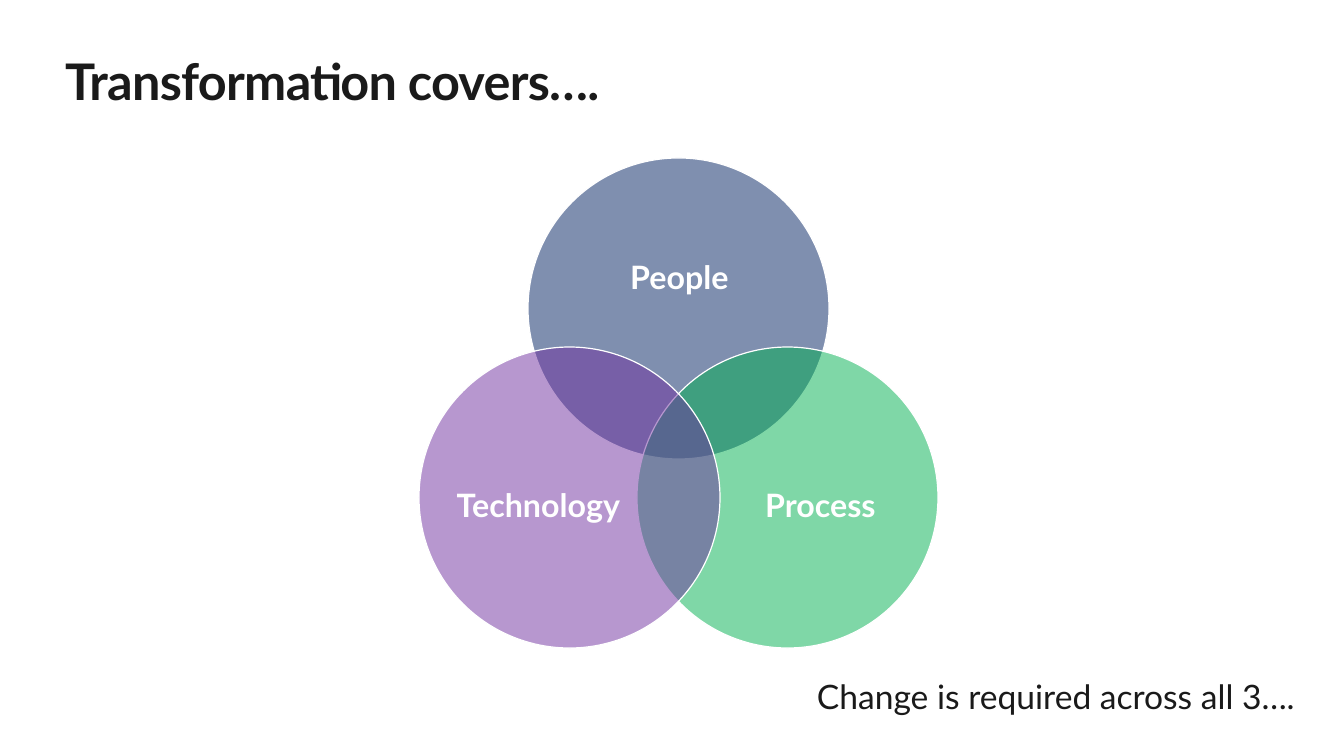
import pptx
import pptx.util
import pptx.dml.color
import pptx.enum.shapes
import pptx.enum.text
import pptx.oxml.ns
from lxml import etree

TITLE = "Transformation covers…."
CAPTION = "Change is required across all 3…."
CIRCLES = [
    {"label": "People", "color": "people", "circle": (528, 158), "text": (569, 211, 221, 136)},
    {"label": "Process", "color": "process", "circle": (637, 347), "text": (730, 424, 181, 166)},
    {"label": "Technology", "color": "technology", "circle": (419, 347), "text": (448, 424, 181, 166)},
]
COLORS = {
    "ink": "1A1A1A",
    "white": "FFFFFF",
    "people": "002060",
    "process": "00B050",
    "technology": "7030A0",
}
FONT = "Lato"
DIAMETER = 301
OPACITY = 50
EMU_PER_PX = 914400 / 100.8

ALIGN = pptx.enum.text.PP_ALIGN
ANCHOR = pptx.enum.text.MSO_ANCHOR
AUTO_SIZE = pptx.enum.text.MSO_AUTO_SIZE


def px(*lengths):
    return [pptx.util.Emu(round(length * EMU_PER_PX)) for length in lengths]


def color(name):
    return pptx.dml.color.RGBColor.from_string(COLORS[name])


def write_text(shape, text, size, ink="ink", bold=False, align=ALIGN.LEFT, anchor=ANCHOR.TOP,
               insets=(0, 0), line_spacing=1.0, tracking=None, auto_size=AUTO_SIZE.NONE):
    frame = shape.text_frame
    frame.word_wrap = True
    frame.auto_size = auto_size
    frame.vertical_anchor = anchor
    frame.margin_left = frame.margin_right = px(insets[0])[0]
    frame.margin_top = frame.margin_bottom = px(insets[1])[0]
    paragraph = frame.paragraphs[0]
    paragraph.alignment = align
    paragraph.line_spacing = line_spacing
    run = paragraph.add_run()
    run.text = text
    run.font.name = FONT
    run.font.size = pptx.util.Pt(size)
    run.font.bold = bold
    run.font.color.rgb = color(ink)
    if tracking is not None:
        run.font._element.set("spc", str(round(tracking * 100)))


def add_circle(slide, position, fill):
    shape = slide.shapes.add_shape(
        pptx.enum.shapes.MSO_SHAPE.OVAL, *px(*position, DIAMETER, DIAMETER))
    shape.shadow.inherit = False
    shape.fill.solid()
    shape.fill.fore_color.rgb = color(fill)
    fill_color = shape._element.spPr.find(
        pptx.oxml.ns.qn("a:solidFill")).find(pptx.oxml.ns.qn("a:srgbClr"))
    alpha = etree.SubElement(fill_color, pptx.oxml.ns.qn("a:alpha"))
    alpha.set("val", str(OPACITY * 1000))
    shape.line.color.rgb = color("white")
    shape.line.width = pptx.util.Pt(0.85)


def main():
    presentation = pptx.Presentation()
    presentation.slide_width, presentation.slide_height = px(1344, 756)
    slide = presentation.slides.add_slide(presentation.slide_layouts[5])

    title = slide.shapes.title
    title.left, title.top, title.width, title.height = px(65, 50, 1215, 61)
    write_text(title, TITLE, 36, bold=True, tracking=-0.5,
               auto_size=AUTO_SIZE.SHAPE_TO_FIT_TEXT)

    for item in CIRCLES:
        add_circle(slide, item["circle"], item["color"])
        label = slide.shapes.add_textbox(*px(*item["text"]))
        write_text(label, item["label"], 23, ink="white", bold=True, align=ALIGN.CENTER,
                   anchor=ANCHOR.MIDDLE, line_spacing=0.9)

    caption = slide.shapes.add_textbox(*px(797, 664, 576, 70))
    write_text(caption, CAPTION, 24, insets=(20, 16), line_spacing=0.9,
               auto_size=AUTO_SIZE.SHAPE_TO_FIT_TEXT)

    presentation.save("out.pptx")


if __name__ == "__main__":
    main()
